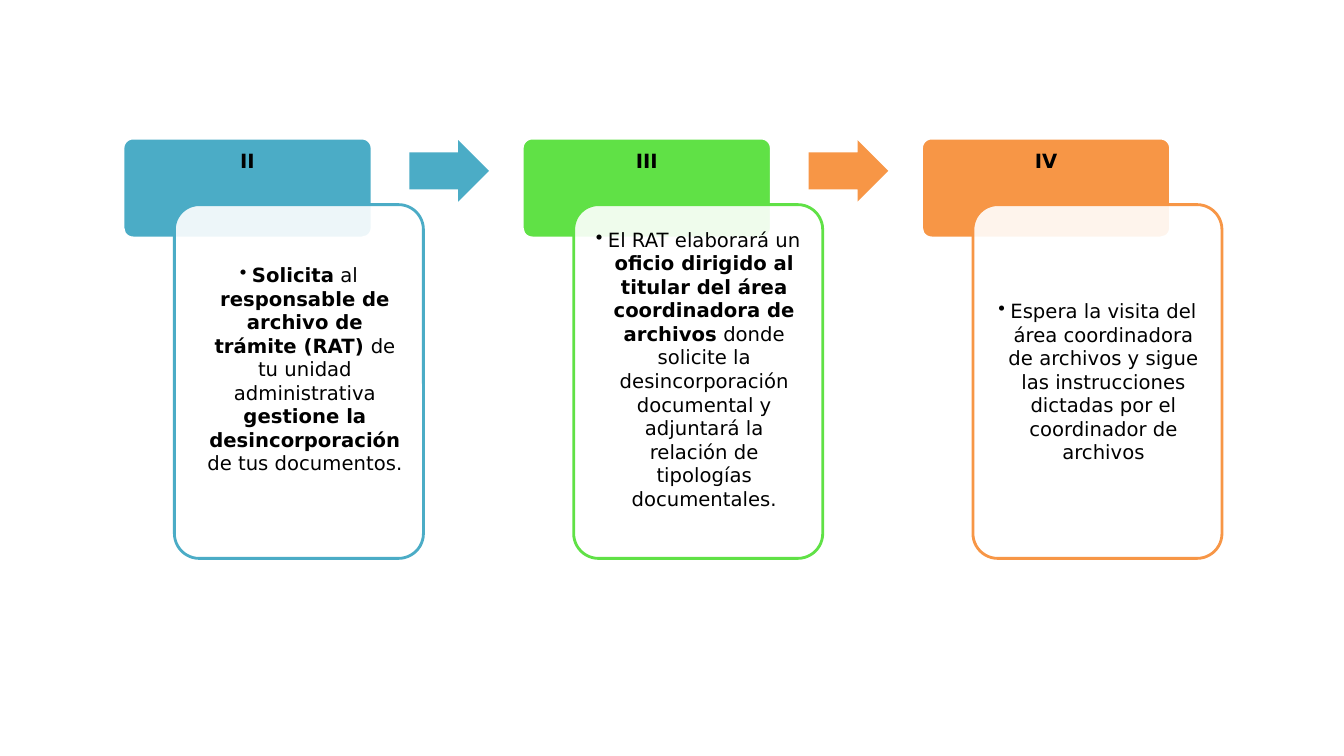
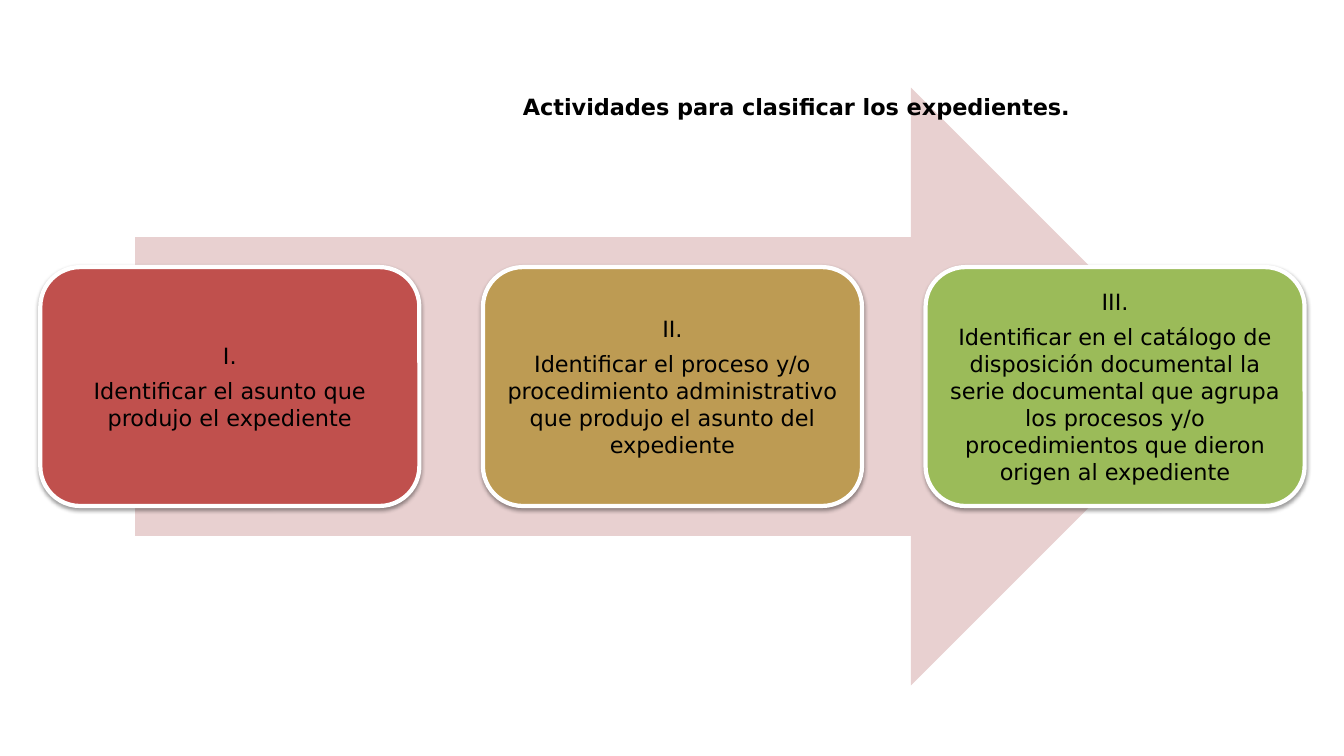
from lxml import etree
from pptx import Presentation
from pptx.dml.color import RGBColor
from pptx.enum.shapes import MSO_SHAPE
from pptx.enum.text import MSO_ANCHOR, MSO_AUTO_SIZE, PP_ALIGN
from pptx.oxml.ns import qn
from pptx.util import Inches, Pt

ROUNDED, ARROW = MSO_SHAPE.ROUNDED_RECTANGLE, MSO_SHAPE.RIGHT_ARROW
TOP, MIDDLE = MSO_ANCHOR.TOP, MSO_ANCHOR.MIDDLE
CENTER = PP_ALIGN.CENTER
NO_AUTOFIT = MSO_AUTO_SIZE.NONE
TITLE_ONLY, BLANK = 5, 6

FONT = "DejaVu Sans"
COLORS = {
    "text": "000000", "white": "FFFFFF", "teal": "4BACC6", "lime": "60E146",
    "orange": "F79646", "blush": "E8D0D0", "red": "C0504D", "ochre": "BD9B53",
    "green": "9BBB59",
}

# Each step: numeral, colour, text runs as (text, bold), extra bottom inset
REQUEST_STEPS = [
    ("II", "teal", [
        ("Solicita", True), (" al ", False),
        ("responsable de archivo de trámite (RAT) ", True),
        ("de tu unidad administrativa ", False),
        ("gestione la desincorporación", True),
        (" de tus documentos.", False)], 0.25),
    ("III", "lime", [
        ("El RAT elaborará un ", False),
        ("oficio dirigido al titular del área coordinadora de archivos", True),
        (" donde solicite la desincorporación documental y adjuntará la "
         "relación de tipologías documentales.", False)], 0.25),
    ("IV", "orange", [
        ("Espera la visita del área coordinadora de archivos y sigue las "
         "instrucciones dictadas por el coordinador de archivos", False)], 0),
]

CLASSIFY_TITLE = "Actividades para clasificar los expedientes."
CLASSIFY_STEPS = [
    ("I.", "red", "Identificar el asunto que produjo el expediente"),
    ("II.", "ochre", "Identificar el proceso y/o procedimiento administrativo "
                     "que produjo el asunto del expediente"),
    ("III.", "green", "Identificar en el catálogo de disposición documental la "
                      "serie documental que agrupa los procesos y/o "
                      "procedimientos que dieron origen al expediente"),
]


def rgb(name):
    return RGBColor.from_string(COLORS[name])


def style_run(run, size, bold=False):
    run.font.name = FONT
    run.font.size = Pt(size)
    run.font.bold = bold
    run.font.color.rgb = rgb("text")


def set_frame(frame, anchor, left, top, right, bottom):
    frame.word_wrap = True
    frame.vertical_anchor = anchor
    frame.margin_left, frame.margin_top = Inches(left), Inches(top)
    frame.margin_right, frame.margin_bottom = Inches(right), Inches(bottom)


def add_block(slide, kind, left, top, width, height, fill,
              line=None, line_width=2, adjust=()):
    block = slide.shapes.add_shape(
        kind, Inches(left), Inches(top), Inches(width), Inches(height))
    block.shadow.inherit = False
    block.fill.solid()
    block.fill.fore_color.rgb = rgb(fill)
    if line:
        block.line.color.rgb = rgb(line)
        block.line.width = Pt(line_width)
    else:
        block.line.fill.background()
    for index, value in enumerate(adjust):
        block.adjustments[index] = value
    return block


def set_opacity(block, percent):
    color = block.fill._xPr.find(qn("a:solidFill"))[0]
    etree.SubElement(color, qn("a:alpha"), val=str(percent * 1000))


def add_soft_shadow(block):
    effects = block._element.spPr.find(qn("a:effectLst"))
    shadow = etree.SubElement(
        effects, qn("a:outerShdw"), blurRad=str(Pt(3.1)), dist=str(Pt(1.6)),
        dir="5400000", rotWithShape="0")
    color = etree.SubElement(shadow, qn("a:srgbClr"), val=COLORS["text"])
    etree.SubElement(color, qn("a:alpha"), val="38000")


def add_bullet(paragraph):
    properties = paragraph._p.get_or_add_pPr()
    properties.set("marL", str(Inches(0.12)))
    properties.set("indent", str(-Inches(0.12)))
    etree.SubElement(properties, qn("a:buChar"), char="•")


def add_request_step(slide, left, top, numeral, color, runs, extra_bottom):
    # Numbered tab behind the card
    tab = add_block(slide, ROUNDED, left, top, 2.47, 0.99, color, "white",
                    adjust=[0.1])
    set_frame(tab.text_frame, TOP, 0.11, 0.08, 0.11, 0.06)
    tab.text_frame.text = numeral
    heading = tab.text_frame.paragraphs[0]
    heading.alignment = CENTER
    style_run(heading.runs[0], 14, True)

    # Card with the instruction
    card = add_block(slide, ROUNDED, left + 0.51, top + 0.66, 2.47, 3.51,
                     "white", color, adjust=[0.1])
    set_opacity(card, 90)
    set_frame(card.text_frame, MIDDLE, 0.11, 0.11, 0.11, 0.11 + extra_bottom)
    instruction = card.text_frame.paragraphs[0]
    instruction.alignment = CENTER
    add_bullet(instruction)
    for text, bold in runs:
        run = instruction.add_run()
        run.text = text
        style_run(run, 14, bold)


def build_request_slide(prs):
    slide = prs.slides.add_slide(prs.slide_layouts[BLANK])
    left, top, pitch = 1.22, 1.37, 3.96
    arrow_colors = ["teal", "orange"]
    for index, step in enumerate(REQUEST_STEPS):
        add_request_step(slide, left + index * pitch, top, *step)
    for index, color in enumerate(arrow_colors):
        add_block(slide, ARROW, left + 2.84 + index * pitch, top + 0.02,
                  0.79, 0.61, color, adjust=[0.6, 0.5])


def add_classify_step(slide, left, top, numeral, color, activity):
    card = add_block(slide, ROUNDED, left, top, 3.76, 2.37, color, "white", 3)
    add_soft_shadow(card)
    set_frame(card.text_frame, MIDDLE, 0.07, 0.07, 0.07, 0.07)
    card.text_frame.text = f"{numeral}\n{activity}"
    for paragraph in card.text_frame.paragraphs:
        paragraph.alignment = CENTER
        paragraph.space_after = Pt(6)
        style_run(paragraph.runs[0], 16)


def place_title(slide, text, left, top, width, height):
    title = slide.shapes.title
    title.left, title.top = Inches(left), Inches(top)
    title.width, title.height = Inches(width), Inches(height)
    set_frame(title.text_frame, MIDDLE, 0.1, 0.05, 0.1, 0.05)
    title.text_frame.auto_size = NO_AUTOFIT
    title.text_frame.text = text
    title.text_frame.paragraphs[0].alignment = CENTER
    style_run(title.text_frame.paragraphs[0].runs[0], 16, True)
    # Bring the title in front of the arrow
    slide.shapes._spTree.append(title._element)


def build_classify_slide(prs):
    slide = prs.slides.add_slide(prs.slide_layouts[TITLE_ONLY])
    add_block(slide, ARROW, 1.34, 0.87, 10.66, 5.93, "blush")
    for index, step in enumerate(CLASSIFY_STEPS):
        add_classify_step(slide, 0.4 + index * 4.39, 2.65, *step)
    place_title(slide, CLASSIFY_TITLE, 3.51, 0.87, 8.78, 0.37)


def main():
    prs = Presentation()
    prs.slide_width, prs.slide_height = Inches(13.33), Inches(7.5)
    build_request_slide(prs)
    build_classify_slide(prs)
    prs.save("out.pptx")


if __name__ == "__main__":
    main()
